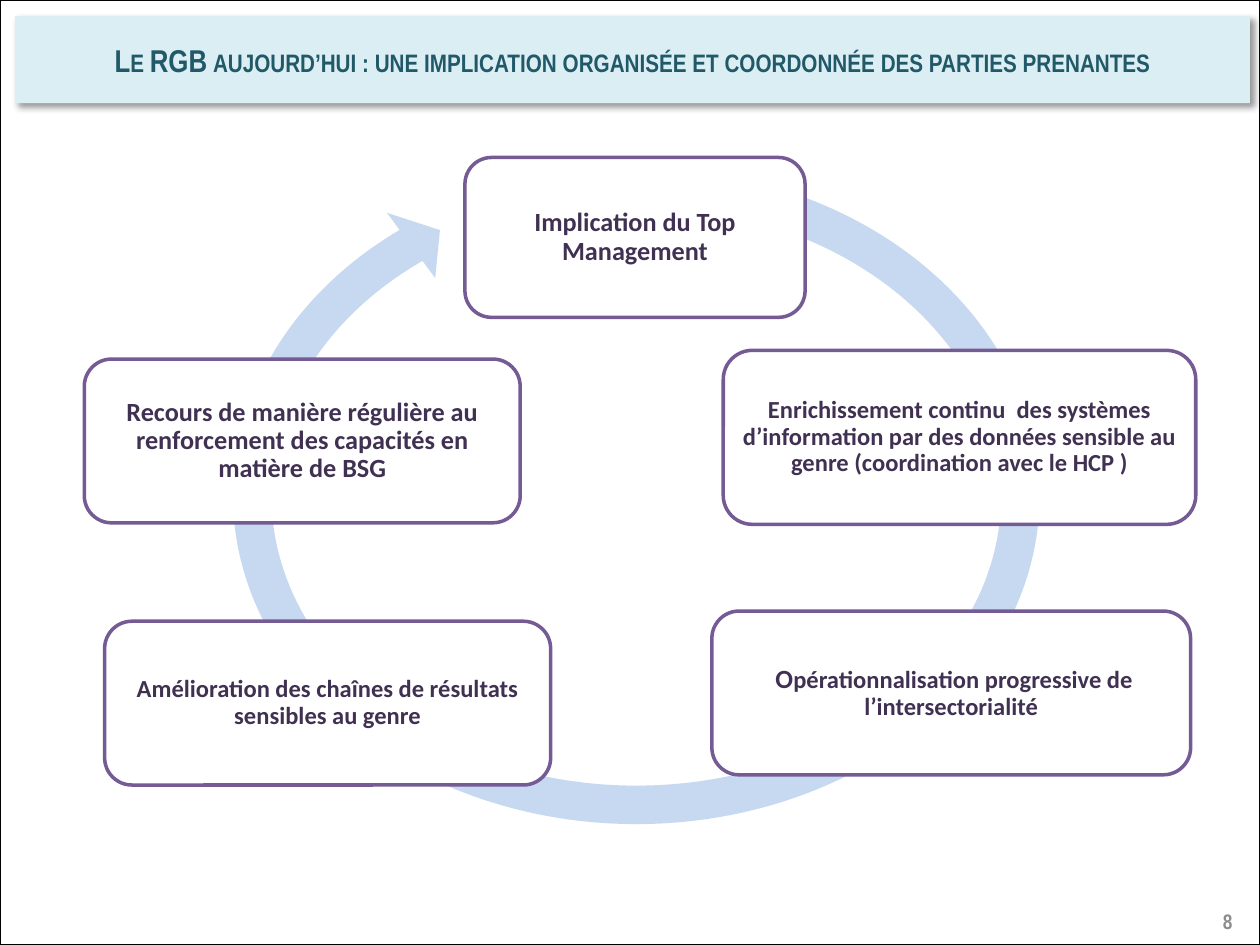
from lxml.etree import SubElement
from pptx import Presentation
from pptx.dml.color import RGBColor
from pptx.enum.shapes import MSO_SHAPE as SHAPE
from pptx.enum.text import MSO_ANCHOR as ANCHOR, MSO_AUTO_SIZE as AUTO, PP_ALIGN as ALIGN
from pptx.oxml.ns import qn
from pptx.util import Pt


def rgb(value):
    return RGBColor.from_string(value)


class Deck:
    """Holds the style and the slide being built."""
    head_font, body_font = "Arial Narrow", "Calibri"
    head, head_fill, grey = "215968", "DBEEF4", "8C8C8C"
    text, border, ring = "403152", "745B93", "C6D9F1"

    def __init__(self, prs):
        self.slide = prs.slides.add_slide(prs.slide_layouts[5])

    def set_text(self, sp, runs, font, color, align=ALIGN.CENTER, inset=None, spacing=None):
        """Fill a shape with one paragraph of (text, size) runs."""
        tf = sp.text_frame
        frame = dict(word_wrap=True, auto_size=AUTO.NONE, vertical_anchor=ANCHOR.MIDDLE)
        if inset is not None:
            sides = ("left", "top", "right", "bottom")
            frame.update({f"margin_{side}": Pt(inset) for side in sides})
        for name, value in frame.items():
            setattr(tf, name, value)
        p = tf.paragraphs[0]
        p.alignment, p.line_spacing = align, spacing
        for text, size in runs:
            r = p.add_run()
            r.text = text
            for name, value in dict(name=font, size=Pt(size), bold=True).items():
                setattr(r.font, name, value)
            r.font.color.rgb = rgb(color)
        return p

    def shape(self, kind, box, fill=None, line=None, width=1):
        sp = self.slide.shapes.add_shape(kind, *map(Pt, box))
        sp.shadow.inherit = False
        if fill:
            sp.fill.solid()
            sp.fill.fore_color.rgb = rgb(fill)
        else:
            sp.fill.background()
        if line:
            sp.line.color.rgb = rgb(line)
            sp.line.width = Pt(width)
        else:
            sp.line.fill.background()
        return sp

    def title(self, text, box):
        sp = self.slide.shapes.title
        for name, value in zip(("left", "top", "width", "height"), box):
            setattr(sp, name, Pt(value))
        # Banner outline with two snipped corners
        spPr = sp._element.spPr
        geom = SubElement(spPr, qn("a:prstGeom"), prst="snip2DiagRect")
        SubElement(geom, qn("a:avLst"))
        sp.fill.solid()
        sp.fill.fore_color.rgb = rgb(self.head_fill)
        # Soft shadow to the lower right
        effects = SubElement(spPr, qn("a:effectLst"))
        shadow = SubElement(effects, qn("a:outerShdw"), blurRad=str(Pt(4)), dist=str(Pt(3)),
                            dir=str(45 * 60000), algn="tl", rotWithShape="0")
        color = SubElement(shadow, qn("a:srgbClr"), val="000000")
        SubElement(color, qn("a:alpha"), val="40000")
        p = self.set_text(sp, [(text, 18)], self.head_font, self.head)
        p.runs[0].font._element.set("cap", "small")

    def cycle_arrow(self, box, adjustments):
        sp = self.shape(SHAPE.CIRCULAR_ARROW, box, self.ring)
        for i, value in enumerate(adjustments):
            sp.adjustments[i] = value

    def step(self, box, runs):
        sp = self.shape(SHAPE.ROUNDED_RECTANGLE, box, "FFFFFF", self.border, 2)
        self.set_text(sp, runs, self.body_font, self.text, inset=4.5, spacing=0.9)

    def page_number(self, text, box):
        sp = self.slide.shapes.add_textbox(*map(Pt, box))
        self.set_text(sp, [(text, 12)], self.head_font, self.grey, ALIGN.RIGHT)


STEPS = [
    ((265.7, 90, 194.4, 91.4), [("Implication du Top Management", 15)]),
    ((59.8, 355, 254.9, 93.6),
     [("Amélioration des chaînes de résultats sensibles au genre", 14)]),
    ((406.8, 349.2, 273.6, 93.6),
     [(" O", 15), ("pérationnalisation progressive de l’intersectorialité", 14)]),
    ((413.3, 200.2, 270, 99.4),
     [("Enrichissement continu  des systèmes d’information par des données sensible "
       "au genre (coordination avec le HCP )", 14)]),
    ((48.2, 205.2, 249.1, 93.6),
     [("Recours de manière régulière au renforcement des capacités en matière de BSG", 15)]),
]


def main():
    prs = Presentation()
    prs.slide_width, prs.slide_height = Pt(720), Pt(540)
    deck = Deck(prs)

    # Slide frame and banner
    deck.shape(SHAPE.RECTANGLE, (0, 0, 720, 540), line="000000", width=0.75)
    deck.title("Le RGB aujourd’hui : une implication organisée et coordonnée "
               "des parties prenantes", (8.6, 9.2, 705.6, 49.7))

    # Cycle: ring behind, steps on top; angles are in 60000ths of a degree / 100000
    angles = [degrees * 0.6 for degrees in (5.51, 228.02, 290.73)]
    deck.cycle_arrow((121, 83.5, 485.3, 399.6), [0.055, *angles, 0.058])
    for box, runs in STEPS:
        deck.step(box, runs)

    # Footer
    deck.page_number("8", (543.6, 512, 167.8, 28.8))
    prs.save("out.pptx")


if __name__ == "__main__":
    main()
